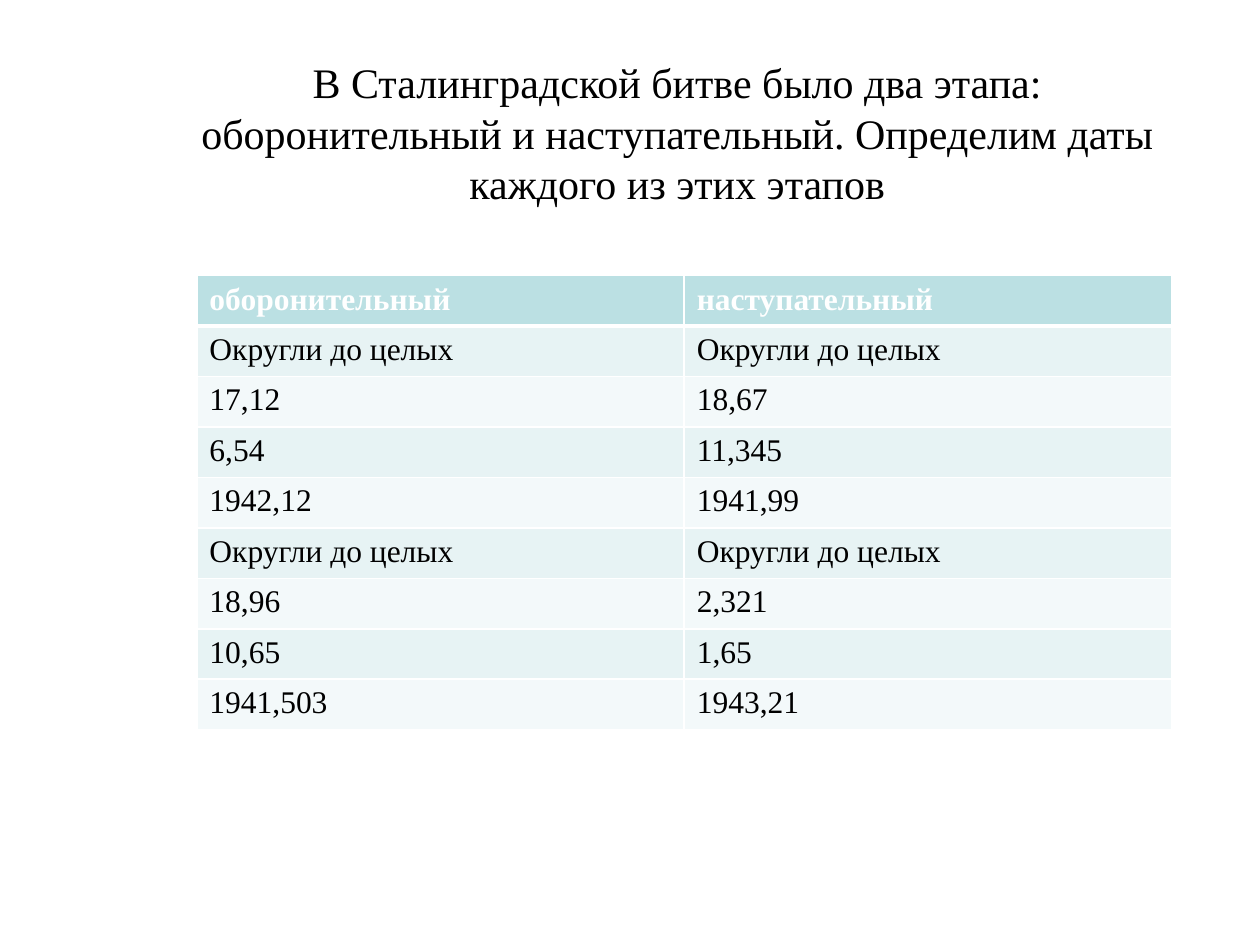
from lxml.etree import SubElement
from pptx import Presentation
from pptx.dml.color import RGBColor
from pptx.enum.text import MSO_ANCHOR, PP_ALIGN
from pptx.oxml.ns import qn
from pptx.util import Pt

FONT = "Times New Roman"
COLORS = {
    "text": "000000",
    "header_text": "FFFFFF",
    "border": "FFFFFF",
    "header": "BBE0E3",
    "odd_row": "E7F3F4",
    "even_row": "F3F9FA",
}
TITLE = ("В Сталинградской битве было два этапа: оборонительный и наступательный. "
         "Определим даты каждого из этих этапов")
ROWS = [
    ("оборонительный", "наступательный"),
    ("Округли до целых", "Округли до целых"),
    ("17,12", "18,67"),
    ("6,54", "11,345"),
    ("1942,12", "1941,99"),
    ("Округли до целых", "Округли до целых"),
    ("18,96", "2,321"),
    ("10,65", "1,65"),
    ("1941,503", "1943,21"),
]


def color(name):
    return RGBColor.from_string(COLORS[name])


def format_font(font, size, color_name, bold=False):
    font.name = FONT
    font.size = Pt(size)
    font.bold = bold
    font.color.rgb = color(color_name)


def add_title(slide, left, top, width, height):
    box = slide.shapes.add_textbox(Pt(left), Pt(top), Pt(width), Pt(height))
    text_frame = box.text_frame
    text_frame.word_wrap = True
    text_frame.vertical_anchor = MSO_ANCHOR.MIDDLE
    text_frame.text = TITLE
    paragraph = text_frame.paragraphs[0]
    paragraph.alignment = PP_ALIGN.CENTER
    format_font(paragraph.runs[0].font, 24, "text")


def set_borders(cell, top, bottom):
    """Draw all four cell borders; top and bottom are widths in points."""
    properties = cell._tc.get_or_add_tcPr()
    for tag, width in (("lnL", 1), ("lnR", 1), ("lnT", top), ("lnB", bottom)):
        line = SubElement(properties, qn(f"a:{tag}"), w=str(Pt(width)))
        fill = SubElement(line, qn("a:solidFill"))
        SubElement(fill, qn("a:srgbClr"), val=COLORS["border"])


def add_stage_table(slide, left, top, width, height):
    row_count, column_count = len(ROWS), len(ROWS[0])
    table = slide.shapes.add_table(
        row_count, column_count, Pt(left), Pt(top), Pt(width), Pt(height)).table
    for column in table.columns:
        column.width = Pt(width / column_count)
    for row_index, values in enumerate(ROWS):
        table.rows[row_index].height = Pt(height / row_count)
        is_header = row_index == 0
        fill_name = "header" if is_header else "odd_row" if row_index % 2 else "even_row"
        for column_index, value in enumerate(values):
            cell = table.cell(row_index, column_index)
            set_borders(cell, top=3 if row_index == 1 else 1, bottom=3 if is_header else 1)
            cell.fill.solid()
            cell.fill.fore_color.rgb = color(fill_name)
            cell.text_frame.text = value
            format_font(cell.text_frame.paragraphs[0].runs[0].font, 18,
                        "header_text" if is_header else "text", is_header)


def main():
    presentation = Presentation()
    presentation.slide_width = Pt(720)
    presentation.slide_height = Pt(540)
    slide = presentation.slides.add_slide(presentation.slide_layouts[6])
    add_title(slide, 90, 39.6, 594, 72)
    add_stage_table(slide, 112.5, 157.5, 557, 252)
    presentation.save("out.pptx")


if __name__ == "__main__":
    main()
